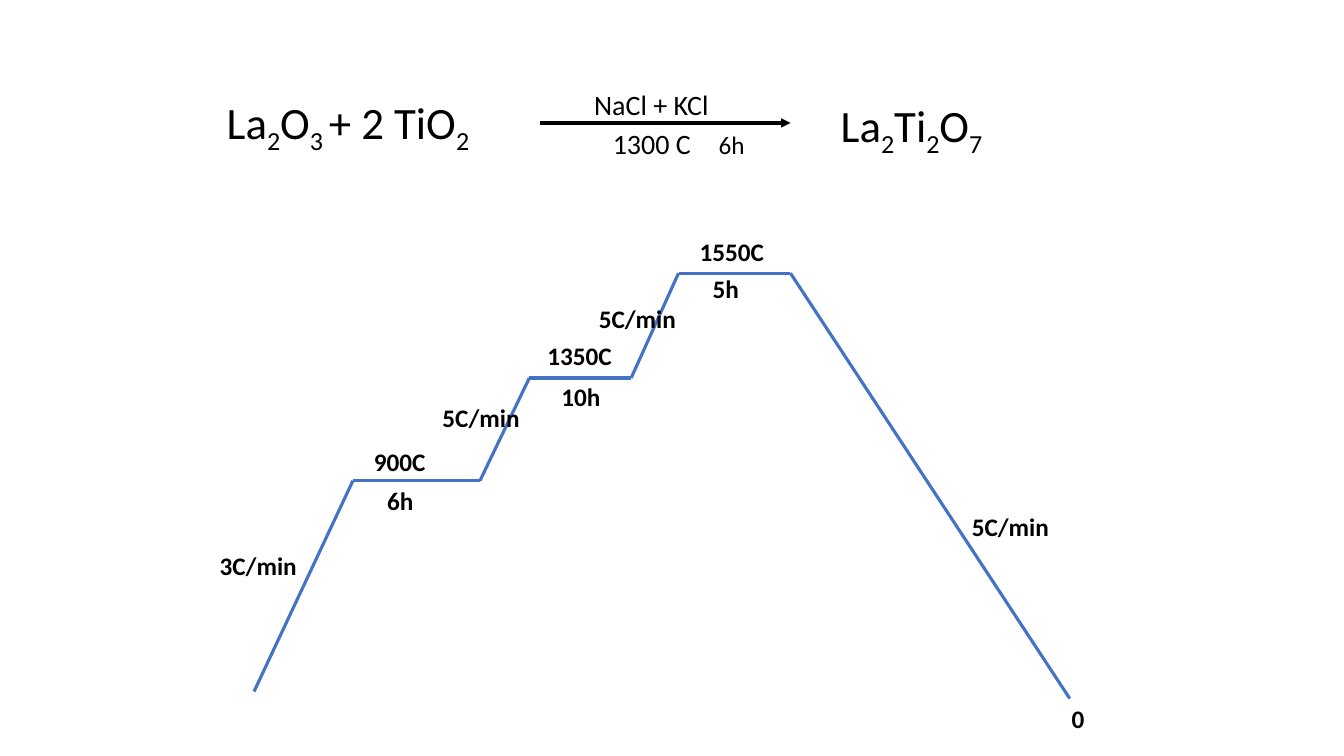
from itertools import pairwise

from lxml import etree
from pptx import Presentation
from pptx import util as u
from pptx.dml.color import RGBColor
from pptx.enum import shapes, text
from pptx.oxml import ns

COLORS = {"ink": "000000", "curve": "4472C4"}
LEFT, MID = text.PP_ALIGN.LEFT, text.PP_ALIGN.CENTER

# Font formats
HEAD = {"size": u.Pt(32), "bold": False}
NOTE = {"size": u.Pt(20), "bold": False}
TIME = {"size": u.Pt(18), "bold": False}
MARK = {"size": u.Pt(18), "bold": True}


def grid(n):
    """Length of n columns or rows; ten of them make an inch."""
    return u.Inches(n / 10)


def add_text(slide, box, parts, style, align=LEFT, wrap=True):
    """Text box; every second part is a subscript."""
    frame = slide.shapes.add_textbox(*map(grid, box)).text_frame
    frame.word_wrap = wrap
    frame.auto_size = text.MSO_AUTO_SIZE.SHAPE_TO_FIT_TEXT
    para = frame.paragraphs[0]
    para.alignment = align
    for i, part in enumerate(parts):
        run = para.add_run()
        run.text = part
        for key, value in {"name": "Calibri", **style}.items():
            setattr(run.font, key, value)
        run.font.color.rgb = RGBColor.from_string(COLORS["ink"])
        if i % 2:
            run.font._element.set("baseline", "-25000")


def add_line(slide, start, end, color, arrow=False):
    line = slide.shapes.add_connector(
        shapes.MSO_CONNECTOR.STRAIGHT, *map(grid, (*start, *end)))
    line.line.width = u.Pt(2.25)
    line.line.color.rgb = RGBColor.from_string(COLORS[color])
    if arrow:
        tip = etree.SubElement(line.line._get_or_add_ln(), ns.qn("a:tailEnd"))
        tip.set("type", "triangle")
    etree.SubElement(line._element.spPr, ns.qn("a:effectLst"))


def add_formula(slide):
    add_text(slide, (21.5, 8.9, 29.8, 6.4),
             ["La", "2", "O", "3 ", "+ 2 TiO", "2"], HEAD)
    add_line(slide, (53.6, 12.2), (78.4, 12.2), "ink", arrow=True)
    add_text(slide, (53.2, 8.2, 22.8, 4.4), ["NaCl + KCl"], NOTE, MID)
    add_text(slide, (56.4, 12.1, 16.5, 4.4), ["1300 C"], NOTE, MID)
    add_text(slide, (70.3, 12.3, 4.6, 4), ["6h"], TIME, wrap=False)
    add_text(slide, (82.4, 9.2, 26.8, 6.4),
             ["La", "2", "Ti", "2", "O", "7"], HEAD)


def add_curve(slide):
    # Corners of the heating and cooling curve
    corners = [(25.2, 68.6), (35, 47.7), (47.6, 47.7), (52.5, 37.5),
               (62.6, 37.5), (67.3, 27.1), (78.4, 27.1), (106.1, 69.3)]
    for start, end in pairwise(corners):
        add_line(slide, start, end, "curve")

    # Temperatures, holding times and rates: left, top, width, text
    marks = [(36.1, 43.8, 9.6, "900C"), (37.4, 47.7, 8.1, "6h"),
             (53.3, 33.3, 9.2, "1350C"), (54.7, 37.3, 6.4, "10h"),
             (68.4, 23, 9.2, "1550C"), (69.7, 26.6, 6.4, "5h"),
             (20.8, 54.1, 10.8, "3C/min"), (42.9, 39.4, 10.8, "5C/min"),
             (58.4, 29.6, 10.8, "5C/min"), (95.4, 50.2, 12.4, "5C/min"),
             (105.3, 69.3, 6.2, "0")]
    for left, top, width, label in marks:
        add_text(slide, (left, top, width, 4), [label], MARK)


def main():
    deck = Presentation()
    deck.slide_width, deck.slide_height = u.Inches(13.33), u.Inches(7.5)
    slide = deck.slides.add_slide(deck.slide_layouts[6])
    add_formula(slide)
    add_curve(slide)
    deck.save("out.pptx")


if __name__ == "__main__":
    main()
